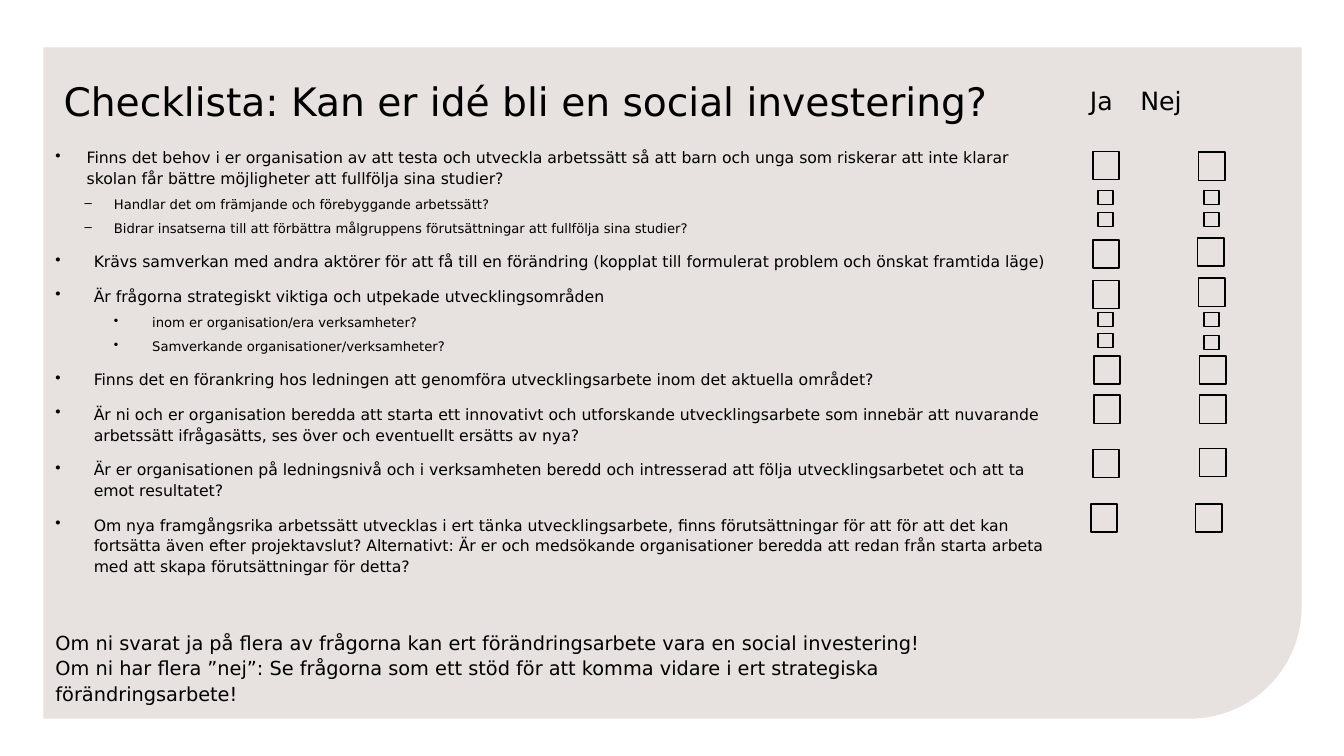
from lxml import etree
from pptx import Presentation
from pptx.dml.color import RGBColor
from pptx.enum.shapes import MSO_SHAPE
from pptx.enum.text import MSO_ANCHOR
from pptx.oxml.ns import qn
from pptx.util import Pt

EMU_PER_PX = 9144
RECTANGLE = MSO_SHAPE.RECTANGLE
ROUND_ONE = MSO_SHAPE.ROUND_1_RECTANGLE
TOP, MIDDLE = MSO_ANCHOR.TOP, MSO_ANCHOR.MIDDLE
FONT = "DejaVu Sans"
COLORS = {"panel": "E7E1DF", "ink": "000000"}

STYLES = {
    "title": {"size": 28, "spacing": 1.1},
    "heading": {"size": 18, "spacing": 1.3},
    "first": {"size": 11.2, "spacing": 1.1, "before": 0, "bullet": "•", "left": 31, "hang": 31},
    "question": {"size": 11.2, "spacing": 1.1, "before": 10, "bullet": "•", "left": 38, "hang": 38},
    "dash": {"size": 9.4, "spacing": 1.1, "before": 5, "bullet": "–", "left": 58, "hang": 29},
    "dot": {"size": 9.4, "spacing": 1.1, "before": 5, "bullet": "•", "left": 96, "hang": 38},
    "closing": {"size": 13.8, "spacing": 1.1, "before": 38},
    "closing_next": {"size": 13.8, "spacing": 1.1, "before": 0},
}

QUESTIONS = [
    ("first", "Finns det behov i er organisation av att testa och utveckla arbetssätt så att barn och unga "
              "som riskerar att inte klarar skolan får bättre möjligheter att fullfölja sina studier?"),
    ("dash", "Handlar det om främjande och förebyggande arbetssätt?"),
    ("dash", "Bidrar insatserna till att förbättra målgruppens förutsättningar att fullfölja sina studier?"),
    ("question", "Krävs samverkan med andra aktörer för att få till en förändring "
                 "(kopplat till formulerat problem och önskat framtida läge)"),
    ("question", "Är frågorna strategiskt viktiga och utpekade utvecklingsområden"),
    ("dot", "inom er organisation/era verksamheter?"),
    ("dot", "Samverkande organisationer/verksamheter?"),
    ("question", "Finns det en förankring hos ledningen att genomföra utvecklingsarbete "
                 "inom det aktuella området?"),
    ("question", "Är ni och er organisation beredda att starta ett innovativt och utforskande "
                 "utvecklingsarbete som innebär att nuvarande arbetssätt ifrågasätts, ses över och "
                 "eventuellt ersätts av nya?"),
    ("question", "Är er organisationen på ledningsnivå och i verksamheten beredd och intresserad "
                 "att följa utvecklingsarbetet och att ta emot resultatet?"),
    ("question", "Om nya framgångsrika arbetssätt utvecklas i ert tänka utvecklingsarbete, finns "
                 "förutsättningar för att för att det kan fortsätta även efter projektavslut? "
                 "Alternativt: Är er och medsökande organisationer beredda att redan från starta "
                 "arbeta med att skapa förutsättningar för detta?"),
    ("closing", "Om ni svarat ja på flera av frågorna kan ert förändringsarbete vara en social investering!"),
    ("closing_next", "Om ni har flera ”nej”: Se frågorna som ett stöd för att komma vidare i ert "
                     "strategiska förändringsarbete!"),
]

BOX_SIZES = {"large": (26, 28), "small": (15, 14)}
ANSWER_ROWS = [
    ("large", (3, 0), (108, 1)),
    ("small", (8, 39), (113, 39)),
    ("small", (8, 61), (113, 61)),
    ("large", (3, 88), (107, 86)),
    ("large", (3, 128), (108, 126)),
    ("small", (8, 160), (113, 160)),
    ("small", (8, 181), (113, 183)),
    ("large", (4, 203), (109, 203)),
    ("large", (4, 242), (109, 242)),
    ("large", (3, 296), (109, 295)),
    ("large", (1, 350), (105, 350)),
]


def px(*lengths):
    return [length * EMU_PER_PX for length in lengths]


def set_values(target, values):
    for name, value in values.items():
        setattr(target, name, value)


def add_panel(slide, box):
    panel = slide.shapes.add_shape(ROUND_ONE, *px(*box))
    panel.shadow.inherit = False
    panel.fill.solid()
    panel.fill.fore_color.rgb = RGBColor.from_string(COLORS["panel"])
    panel.line.fill.background()
    panel._element.spPr.find(qn("a:xfrm")).set("flipV", "1")


def write_paragraph(paragraph, text, style):
    properties = paragraph._p.get_or_add_pPr()
    if "bullet" in style:
        left, hang = px(style["left"], style["hang"])
        properties.set("marL", str(left))
        properties.set("indent", str(-hang))
        etree.SubElement(properties, qn("a:buChar")).set("char", style["bullet"])
    set_values(paragraph, {"line_spacing": style["spacing"], "space_before": Pt(style.get("before", 0))})
    run = paragraph.add_run()
    run.text = text
    set_values(run.font, {"name": FONT, "size": Pt(style["size"])})
    run.font.color.rgb = RGBColor.from_string(COLORS["ink"])


def add_text(slide, box, items, anchor=TOP):
    frame = slide.shapes.add_textbox(*px(*box)).text_frame
    set_values(frame, {"word_wrap": True, "vertical_anchor": anchor, "margin_left": 0,
                       "margin_top": 0, "margin_right": 0, "margin_bottom": 0})
    for index, (style_name, text) in enumerate(items):
        paragraph = frame.add_paragraph() if index else frame.paragraphs[0]
        write_paragraph(paragraph, text, STYLES[style_name])


def add_answer_boxes(slide, box):
    left, top = box
    for size, *corners in ANSWER_ROWS:
        for x, y in corners:
            checkbox = slide.shapes.add_shape(RECTANGLE, *px(left + x, top + y, *BOX_SIZES[size]))
            checkbox.shadow.inherit = False
            checkbox.fill.background()
            checkbox.line.width = Pt(1)
            checkbox.line.color.rgb = RGBColor.from_string(COLORS["ink"])


def build_checklist(slide, box):
    left, top, width, height = box
    add_panel(slide, box)
    add_text(slide, (left + 20, top - 7, 1099, 115),
             [("title", "Checklista: Kan er idé bli en social investering?")], MIDDLE)
    add_text(slide, (left + 12, top + 98, 995, 558), QUESTIONS)
    add_text(slide, (left + 1038, top + 29, 210, 74), [("heading", "Ja\tNej")])
    add_answer_boxes(slide, (left + 1038, top + 103))


def main():
    presentation = Presentation()
    presentation.slide_width, presentation.slide_height = px(1333, 750)
    slide = presentation.slides.add_slide(presentation.slide_layouts[6])
    build_checklist(slide, (43, 47, 1248, 666))
    presentation.save("out.pptx")


if __name__ == "__main__":
    main()
